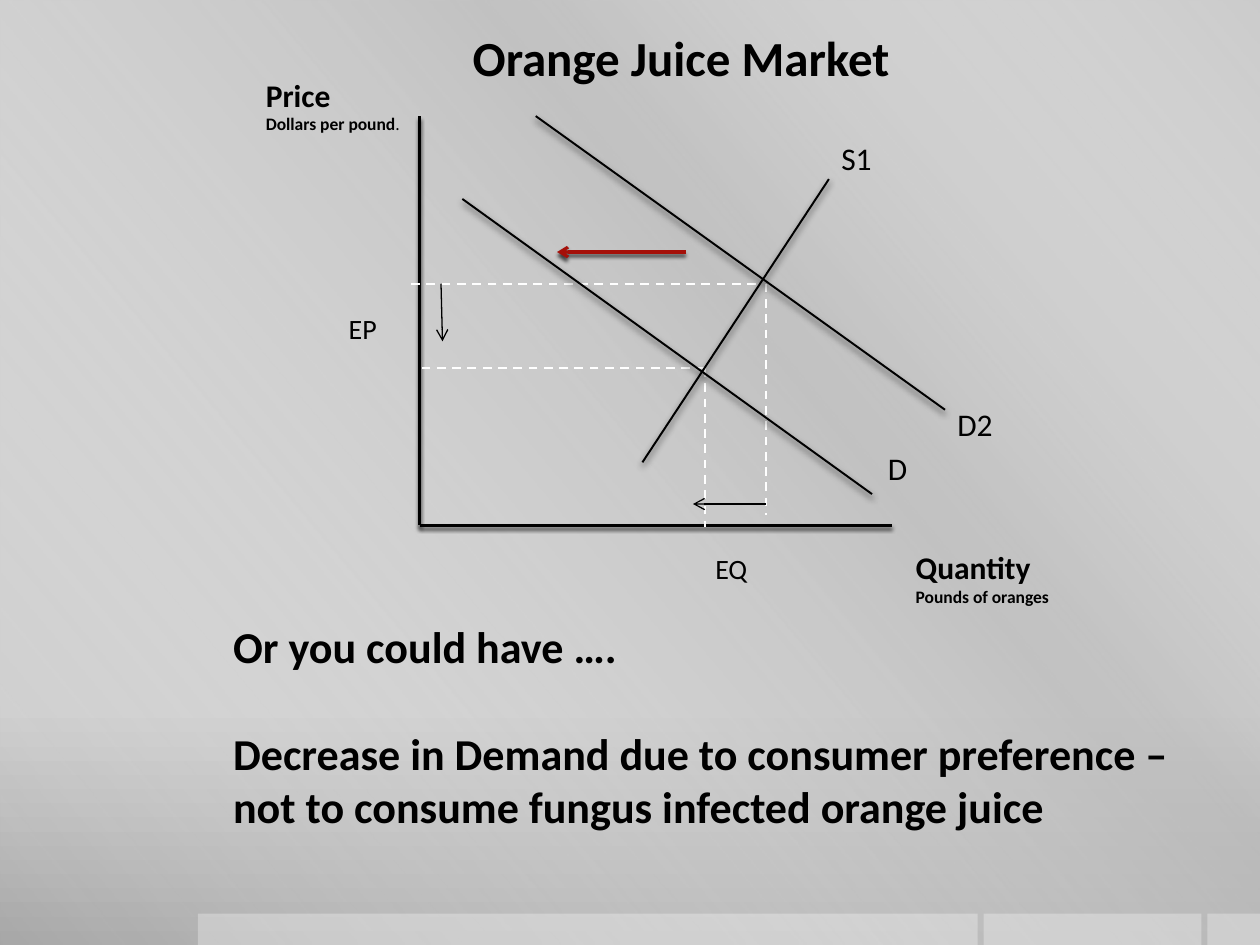
from dataclasses import dataclass
from typing import Optional

from lxml import etree
from pptx import Presentation
from pptx.dml.color import RGBColor
from pptx.enum import dml, shapes, text
from pptx.oxml import ns
from pptx.util import Cm, Pt

BLACK = RGBColor(0x00, 0x00, 0x00)
WHITE = RGBColor(0xFF, 0xFF, 0xFF)
RED = RGBColor(0xA5, 0x10, 0x09)
GRAY = RGBColor(0xBF, 0xBF, 0xBF)
BACK_LIGHT = RGBColor(0xCB, 0xCB, 0xCB)
BACK_MIDDLE = RGBColor(0xC8, 0xC8, 0xC8)
BACK_DARK = RGBColor(0xA7, 0xA7, 0xA7)

FONT = "Calibri"
WIDTH, HEIGHT = 25.4, 19.05

# Chart positions in centimetres
AXIS_X, AXIS_Y, AXIS_TOP, AXIS_END = 8.46, 10.59, 2.34, 17.98
OLD_PRICE, NEW_PRICE = 5.72, 7.42
OLD_QUANTITY, NEW_QUANTITY = 15.44, 14.22


@dataclass(frozen=True)
class LineStyle:
    color: RGBColor
    width: float
    dashed: bool = False
    arrow: bool = False
    shadow_blur: Optional[float] = None


@dataclass(frozen=True)
class Line:
    start: tuple[float, float]
    end: tuple[float, float]
    style: LineStyle


@dataclass(frozen=True)
class Row:
    words: str
    size: float
    bold: bool = False
    plain_end: str = ""
    space_before: float = 0


@dataclass(frozen=True)
class Label:
    left: float
    top: float
    width: float
    height: float
    rows: tuple[Row, ...]
    heading: bool = False


AXIS = LineStyle(BLACK, 1.75, shadow_blur=2)
CURVE = LineStyle(BLACK, 1.1, shadow_blur=4)
GUIDE = LineStyle(WHITE, 1.25, dashed=True)
CHANGE = LineStyle(BLACK, 0.75, arrow=True)
SHIFT = LineStyle(RED, 1.75, arrow=True, shadow_blur=2)

LINES = (
    Line((AXIS_X, AXIS_TOP), (AXIS_X, AXIS_Y), AXIS),
    Line((AXIS_X, AXIS_Y), (AXIS_END, AXIS_Y), AXIS),
    Line((NEW_QUANTITY, NEW_PRICE), (AXIS_X, NEW_PRICE), GUIDE),
    Line((NEW_QUANTITY, NEW_PRICE), (NEW_QUANTITY, 10.62), GUIDE),
    Line((15.24, OLD_PRICE), (8.26, OLD_PRICE), GUIDE),
    Line((OLD_QUANTITY, OLD_PRICE), (OLD_QUANTITY, 10.39), GUIDE),
    Line((12.95, 9.32), (16.71, 3.61), CURVE),
    Line((9.32, 4.01), (17.58, 9.96), CURVE),
    Line((10.8, AXIS_TOP), (19.05, 8.26), CURVE),
    Line((8.89, OLD_PRICE), (8.92, 6.88), CHANGE),
    Line((OLD_QUANTITY, 10.16), (13.97, 10.16), CHANGE),
    Line((13.82, 5.08), (11.23, 5.08), SHIFT),
)

LABELS = (
    Label(4.7, 12.37, 20.07, 5.69, (
        Row("Or you could have ….", 25.2, True),
        Row("Decrease in Demand due to consumer preference – "
            "not to consume fungus infected orange juice", 25.2, True, space_before=30.5),
    ), heading=True),
    Label(5.11, 1.4, 3.25, 1.45,
          (Row("Price", 18, True), Row("Dollars per pound", 10, True, plain_end="."))),
    Label(18.21, 10.92, 3.25, 1.45,
          (Row("Quantity", 18, True), Row("Pounds of oranges", 10, True))),
    Label(16.71, 2.67, 1.14, 1.02, (Row("S1", 18),)),
    Label(19.05, 8.05, 1.24, 1.02, (Row("D2", 18),)),
    Label(17.65, 8.92, 0.91, 1.02, (Row("D", 18),)),
    Label(14.17, 11, 1.17, 0.94, (Row("EQ", 16),)),
    Label(6.78, 6.15, 1.09, 0.94, (Row("EP", 16),)),
    Label(9.53, 0.43, 10.11, 2.97, (Row("Orange Juice Market", 28, True),), heading=True),
)


def add_child(parent, tag: str, **attributes):
    values = {name: str(value) for name, value in attributes.items()}
    return etree.SubElement(parent, ns.qn(tag), values)


def set_gradient(fill, owner, angle: int, stops) -> None:
    """Fill with (position, colour, opacity) stops in percent, angle clockwise."""
    fill.gradient()
    gradient = owner.find(".//" + ns.qn("a:gradFill"))
    stop_list = gradient.find(ns.qn("a:gsLst"))
    for stop in list(stop_list):
        stop_list.remove(stop)
    for position, color, opacity in stops:
        stop = add_child(stop_list, "a:gs", pos=position * 1000)
        add_child(add_child(stop, "a:srgbClr", val=color), "a:alpha", val=opacity * 1000)
    gradient.find(ns.qn("a:lin")).set("ang", str(angle * 60000))


def add_rectangle(slide, left: float, top: float, width: float, height: float):
    shape = slide.shapes.add_shape(
        shapes.MSO_SHAPE.RECTANGLE, Cm(left), Cm(top), Cm(width), Cm(height))
    shape.shadow.inherit = False
    shape.line.fill.background()
    return shape


def add_backdrop(slide) -> None:
    set_gradient(slide.background.fill, slide.element, 90, (
        (0, BACK_LIGHT, 100), (76, BACK_MIDDLE, 100), (100, BACK_DARK, 100)))
    sheen = add_rectangle(slide, 0, 0, WIDTH, HEIGHT)
    set_gradient(sheen.fill, sheen.element, 140, (
        (0, WHITE, 0), (34, GRAY, 61), (38, GRAY, 76), (100, WHITE, 0)))
    left, gap, bar_height = 3.99, 0.12, 0.63
    for width in (15.72, 4.39, 1.06):
        bar = add_rectangle(slide, left, HEIGHT - bar_height, width, bar_height)
        bar.fill.solid()
        bar.fill.fore_color.rgb = WHITE
        color = bar.element.spPr.find(".//" + ns.qn("a:srgbClr"))
        add_child(color, "a:alpha", val=30000)
        left += width + gap


def add_line(slide, line: Line) -> None:
    connector = slide.shapes.add_connector(
        shapes.MSO_CONNECTOR.STRAIGHT, *map(Cm, line.start + line.end))
    style = line.style
    connector.line.color.rgb = style.color
    connector.line.width = Pt(style.width)
    if style.dashed:
        connector.line.dash_style = dml.MSO_LINE.DASH
    properties = connector.element.spPr
    if style.arrow:
        add_child(properties.find(ns.qn("a:ln")), "a:tailEnd", type="arrow")
    effects = add_child(properties, "a:effectLst")
    if style.shadow_blur is not None:
        shadow = add_child(effects, "a:outerShdw", blurRad=Pt(style.shadow_blur),
                           dist=Pt(2), dir=90 * 60000, rotWithShape=0)
        add_child(add_child(shadow, "a:srgbClr", val=BLACK), "a:alpha", val=70000)


def add_label(slide, label: Label) -> None:
    box = slide.shapes.add_textbox(
        Cm(label.left), Cm(label.top), Cm(label.width), Cm(label.height))
    frame = box.text_frame
    frame.word_wrap = label.heading
    if label.heading:
        frame.margin_left = frame.margin_right = 0
    else:
        frame.auto_size = text.MSO_AUTO_SIZE.SHAPE_TO_FIT_TEXT
    for index, row in enumerate(label.rows):
        paragraph = frame.add_paragraph() if index else frame.paragraphs[0]
        if row.space_before:
            paragraph.space_before = Pt(row.space_before)
        paragraph.font.name = FONT
        paragraph.font.size = Pt(row.size)
        paragraph.font.bold = row.bold
        paragraph.font.color.rgb = BLACK
        paragraph.add_run().text = row.words
        if row.plain_end:
            ending = paragraph.add_run()
            ending.text = row.plain_end
            ending.font.bold = False


def main() -> None:
    presentation = Presentation()
    presentation.slide_width, presentation.slide_height = Cm(WIDTH), Cm(HEIGHT)
    slide = presentation.slides.add_slide(presentation.slide_layouts[6])
    add_backdrop(slide)
    for line in LINES:
        add_line(slide, line)
    for label in LABELS:
        add_label(slide, label)
    presentation.save("out.pptx")


if __name__ == "__main__":
    main()
